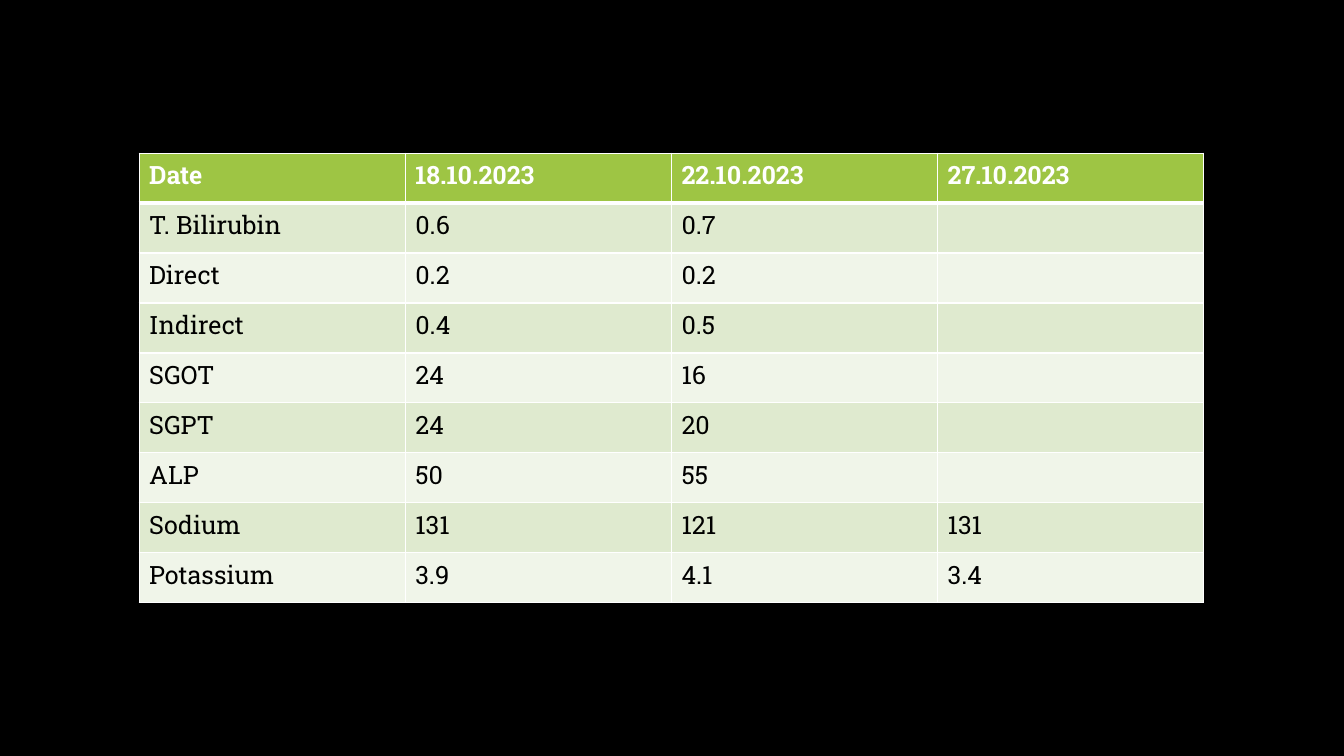
import dataclasses

import lxml.etree
import pptx
import pptx.dml.color
import pptx.oxml.ns
import pptx.table
import pptx.util

COLORS = {
    "background": "000000",
    "header": "9EC544",
    "odd_row": "DFEACF",
    "even_row": "F0F5E9",
    "border": "FFFFFF",
    "header_text": "FFFFFF",
    "body_text": "000000",
}


@dataclasses.dataclass(frozen=True)
class LabRow:
    test: str
    results: tuple[str, str, str]


@dataclasses.dataclass(frozen=True)
class RowStyle:
    fill: str
    text: str
    bold: bool
    top: float = 1
    bottom: float = 1


LAB_ROWS = (
    LabRow("Date", ("18.10.2023", "22.10.2023", "27.10.2023")),
    LabRow("T. Bilirubin", ("0.6", "0.7", "")),
    LabRow("Direct", ("0.2", "0.2", "")),
    LabRow("Indirect", ("0.4", "0.5", "")),
    LabRow("SGOT", ("24", "16", "")),
    LabRow("SGPT", ("24", "20", "")),
    LabRow("ALP", ("50", "55", "")),
    LabRow("Sodium", ("131", "121", "131")),
    LabRow("Potassium", ("3.9", "4.1", "3.4")),
)


def color(name: str) -> pptx.dml.color.RGBColor:
    return pptx.dml.color.RGBColor.from_string(COLORS[name])


def row_style(index: int) -> RowStyle:
    if index == 0:
        return RowStyle("header", "header_text", True, bottom=3)
    band = "odd_row" if index % 2 else "even_row"
    return RowStyle(band, "body_text", False, top=3 if index == 1 else 1)


def draw_borders(cell: pptx.table._Cell, style: RowStyle) -> None:
    qn = pptx.oxml.ns.qn
    properties = cell._tc.get_or_add_tcPr()
    widths = {"lnL": 1, "lnR": 1, "lnT": style.top, "lnB": style.bottom}
    for side, width in widths.items():
        border = lxml.etree.SubElement(
            properties, qn(f"a:{side}"), w=str(pptx.util.Pt(width))
        )
        paint = lxml.etree.SubElement(border, qn("a:solidFill"))
        lxml.etree.SubElement(paint, qn("a:srgbClr"), val=COLORS["border"])


def draw_cell(cell: pptx.table._Cell, text: str, style: RowStyle) -> None:
    draw_borders(cell, style)
    cell.fill.solid()
    cell.fill.fore_color.rgb = color(style.fill)
    cell.text = text
    font = cell.text_frame.paragraphs[0].font
    if text:
        font = cell.text_frame.paragraphs[0].runs[0].font
    font_format = {
        "name": "Roboto Slab",
        "size": pptx.util.Pt(18),
        "bold": style.bold,
    }
    for attribute, value in font_format.items():
        setattr(font, attribute, value)
    font.color.rgb = color(style.text)


def main() -> None:
    presentation = pptx.Presentation()
    presentation.slide_width = pptx.util.Inches(13.33)
    presentation.slide_height = pptx.util.Inches(7.5)
    slide = presentation.slides.add_slide(presentation.slide_layouts[6])
    slide.background.fill.solid()
    slide.background.fill.fore_color.rgb = color("background")

    lab_results = slide.shapes.add_table(
        len(LAB_ROWS),
        1 + len(LAB_ROWS[0].results),
        pptx.util.Inches(1.38),
        pptx.util.Inches(1.52),
        pptx.util.Inches(10.56),
        pptx.util.Inches(4.46),
    ).table
    for row_index, lab_row in enumerate(LAB_ROWS):
        style = row_style(row_index)
        for column_index, text in enumerate((lab_row.test, *lab_row.results)):
            draw_cell(lab_results.cell(row_index, column_index), text, style)

    presentation.save("out.pptx")


if __name__ == "__main__":
    main()
